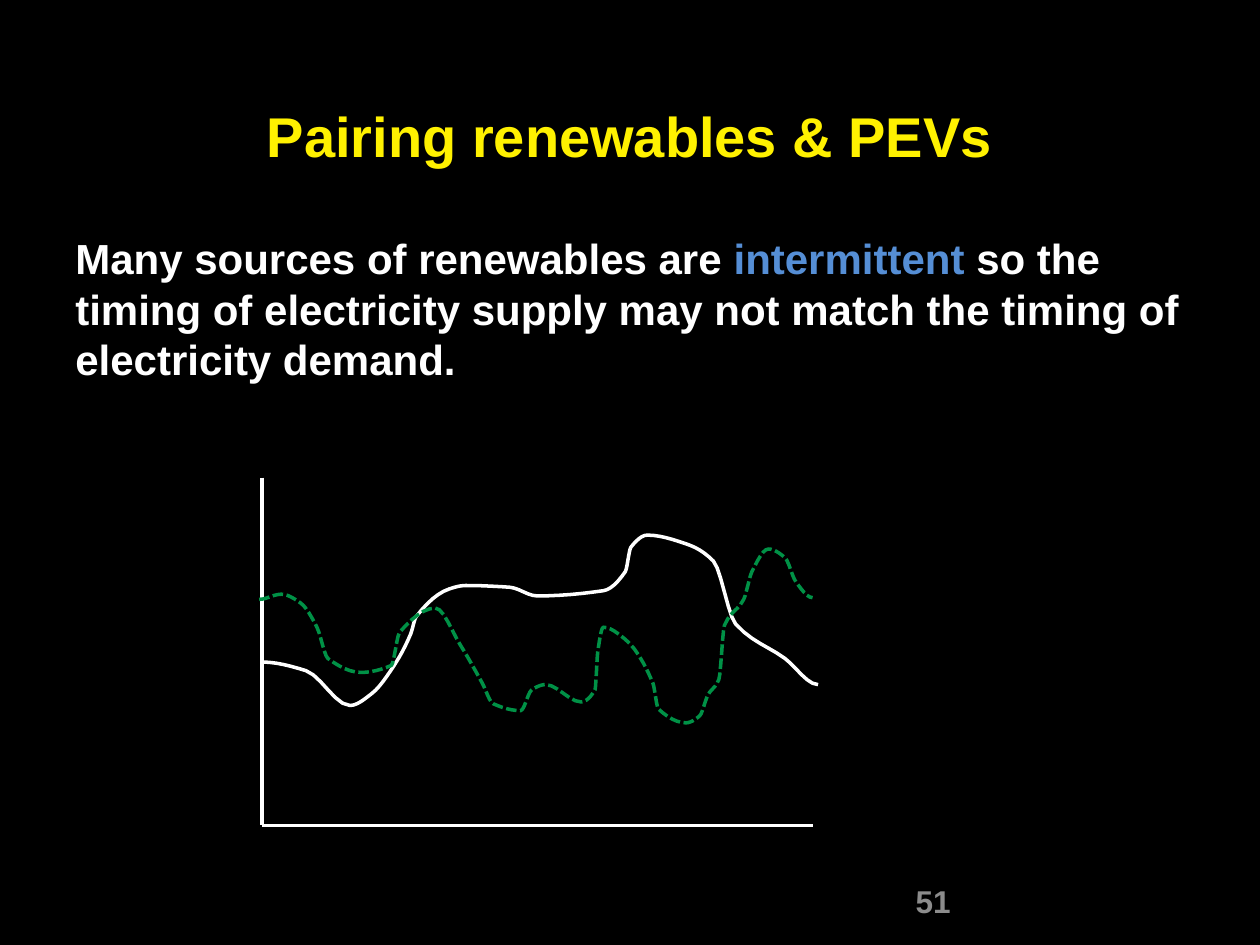
import itertools

import lxml.etree
import pptx
import pptx.dml.color
import pptx.enum.dml
import pptx.enum.shapes
import pptx.enum.text
import pptx.oxml.ns
import pptx.util

Cm, Pt = pptx.util.Cm, pptx.util.Pt
ALIGN = pptx.enum.text.PP_ALIGN
DASHED = pptx.enum.dml.MSO_LINE.SQUARE_DOT
WHITE, YELLOW, BLUE, GREEN, GREY = "FFFFFF", "FFF100", "558ED5", "009146", "8C8C8C"

# Peaks, troughs and bends of each curve, as percent of the chart's
# width (from the left) and height (from the top); the rest is interpolated.
DEMAND_BENDS = [
    (0, 53), (8, 55.5), (16, 65.5), (20, 62), (24, 54), (27, 45), (28, 40),
    (34, 32), (37, 31), (45, 31.5), (50, 34), (62, 32.5), (66, 27), (67, 20),
    (70, 16.5), (77, 19), (82, 24), (86, 42), (95, 52), (101, 59.5),
]
SUPPLY_BENDS = [
    (-0.5, 35), (3.5, 33.5), (7, 36), (10, 43), (12, 52), (18, 56), (23.5, 54),
    (25, 44.5), (31.5, 37.5), (36, 48), (40, 59), (42, 65), (47, 67), (49, 61),
    (51.5, 59.5), (58, 64.5), (60.5, 61), (61, 50), (62, 43), (66, 46.5),
    (71, 59), (72, 66.5), (77, 70.5), (79.5, 68.5), (81, 62.5), (83, 58),
    (84, 42.5), (87.5, 35), (89, 27), (92, 20.5), (95, 23), (97, 30), (100, 34.5),
]
STEPS = 6  # line segments drawn between two bends


def rgb(value):
    return pptx.dml.color.RGBColor.from_string(value)


def set_attrs(obj, **values):
    for name, value in values.items():
        setattr(obj, name, value)


def bend_slopes(bends):
    """Flat at ends, peaks and troughs; elsewhere the harmonic mean of both sides."""
    rates = [(y2 - y1) / (x2 - x1)
             for (x1, y1), (x2, y2) in itertools.pairwise(bends)]
    inner = [2 * a * b / (a + b) if a * b > 0 else 0
             for a, b in itertools.pairwise(rates)]
    return [0, *inner, 0]


def smooth(bends):
    """Join the bends by cubic Hermite arcs, which never overshoot a bend."""
    points = [bends[0]]
    arcs = itertools.pairwise(zip(bends, bend_slopes(bends)))
    for ((x1, y1), slope1), ((x2, y2), slope2) in arcs:
        run = x2 - x1
        for step in range(1, STEPS + 1):
            t = step / STEPS
            ease = t * t * (3 - 2 * t)
            y = (y1 + (y2 - y1) * ease
                 + run * slope1 * t * (1 - t) ** 2
                 - run * slope2 * t * t * (1 - t))
            points.append((x1 + run * t, y))
    return points


def add_text(s, box, runs, size, align=ALIGN.LEFT):
    """Place one paragraph of bold (text, colour) runs in the box."""
    tf = s.shapes.add_textbox(*box).text_frame
    tf.word_wrap = True
    p = tf.paragraphs[0]
    p.alignment = align
    for text, colour in runs:
        r = p.add_run()
        r.text = text
        set_attrs(r.font, name="Arial", size=Pt(size), bold=True)
        r.font.color.rgb = rgb(colour)


def style_line(line, colour, dash=None):
    line.color.rgb = rgb(colour)
    set_attrs(line, width=Pt(2), dash_style=dash)


def add_axis(shapes, x1, y1, x2, y2):
    axis = shapes.add_connector(
        pptx.enum.shapes.MSO_CONNECTOR.STRAIGHT, x1, y1, x2, y2)
    style_line(axis.line, WHITE)
    lxml.etree.SubElement(axis._element.spPr, pptx.oxml.ns.qn("a:effectLst"))


def add_curve(shapes, box, bends, colour, dash=None):
    """Draw the smoothed bends, scaled from percent to the box."""
    left, top, width, height = box
    points = [(left + width * x / 100, top + height * y / 100)
              for x, y in smooth(bends)]
    builder = shapes.build_freeform(*points[0])
    builder.add_line_segments(points[1:], close=False)
    sp = builder.convert_to_shape()
    sp.shadow.inherit = False
    sp.fill.background()
    style_line(sp.line, colour, dash)


def add_load_chart(s, box):
    """Draw the axes with the demand and supply curves as one group."""
    left, top, width, height = box
    right, bottom = left + width, top + height
    shapes = s.shapes.add_group_shape().shapes
    add_axis(shapes, left, top, left, bottom)
    add_axis(shapes, right, bottom, left, bottom)
    add_curve(shapes, box, DEMAND_BENDS, WHITE)
    add_curve(shapes, box, SUPPLY_BENDS, GREEN, DASHED)


def main():
    prs = pptx.Presentation()
    set_attrs(prs, slide_width=Cm(25.4), slide_height=Cm(19.05))
    s = prs.slides.add_slide(prs.slide_layouts[6])
    s.background.fill.solid()
    s.background.fill.fore_color.rgb = rgb("000000")
    margin, content_width = Cm(1.27), Cm(22.86)

    # Title
    add_text(s, (margin, Cm(1.93), content_width, Cm(2.54)),
             [("Pairing renewables & PEVs", YELLOW)], 32, ALIGN.CENTER)

    # Statement
    add_text(s, (margin, Cm(4.57), content_width, Cm(13.08)),
             [("Many sources of renewables are ", WHITE),
              ("intermittent", BLUE),
              (" so the timing of electricity supply may not match "
               "the timing of electricity demand.", WHITE)], 24)

    # Supply and demand over time
    add_load_chart(s, (Cm(5.28), Cm(9.63), Cm(11.1), Cm(7.01)))

    # Page number
    add_text(s, (Cm(18.21), Cm(17.65), Cm(5.92), Cm(1.02)), [("51", GREY)], 18)

    prs.save("out.pptx")


if __name__ == "__main__":
    main()
